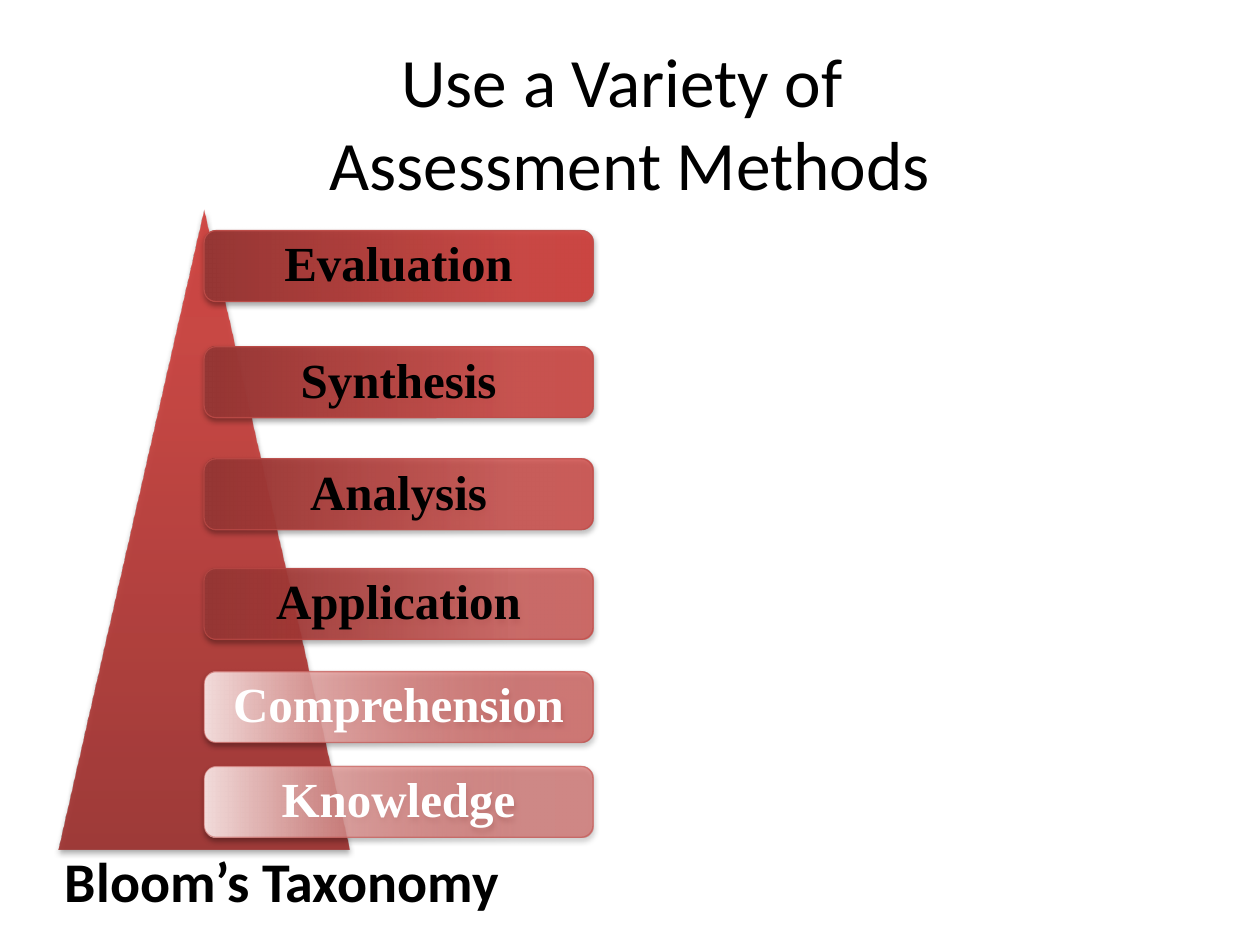
from lxml import etree
from pptx import Presentation
from pptx.dml import color as dml
from pptx.enum import shapes, text
from pptx.oxml import ns
from pptx.util import Cm, Pt

LEVELS = [
    ("Evaluation", 0, "953735", "000000"),
    ("Synthesis", 2.34, "953735", "000000"),
    ("Analysis", 4.6, "953735", "000000"),
    ("Application", 6.81, "953735", "000000"),
    ("Comprehension", 8.89, "F2DCDB", "FFFFFF"),
    ("Knowledge", 10.8, "F2DCDB", "FFFFFF"),
]


def rgb(value):
    """Turn a hex string into a colour."""
    return dml.RGBColor.from_string(value)


def add_tint(parent, value, opacity):
    """Append a partly transparent colour to an XML element."""
    tint = etree.SubElement(parent, ns.qn("a:srgbClr"), val=str(rgb(value)))
    etree.SubElement(tint, ns.qn("a:alpha"), val=str(opacity * 1000))


def shade(shape, start, start_opacity, opacity, angle):
    """Give a shape its red gradient and soft shadow."""
    shape.fill.gradient()
    shape.fill.gradient_angle = angle
    properties = shape._element.spPr
    stops = properties.find(".//" + ns.qn("a:gsLst"))
    for stop in list(stops):
        stops.remove(stop)
    for position, value, alpha in [
        (0, start, start_opacity), (80, "CB3E3A", opacity), (100, "CE3B37", opacity)
    ]:
        add_tint(etree.SubElement(stops, ns.qn("a:gs"), pos=str(position * 1000)), value, alpha)
    shape.shadow.inherit = False
    shadow = etree.SubElement(
        properties.find(ns.qn("a:effectLst")), ns.qn("a:outerShdw"),
        blurRad=str(Pt(3.1)), dist=str(Pt(1.8)), dir="5400000", rotWithShape="0",
    )
    add_tint(shadow, "000000", 35)


def write(frame, words, font_name, size, value, bold=False, align=None):
    """Write one formatted paragraph."""
    frame.word_wrap = True
    frame.text = words
    paragraph = frame.paragraphs[0]
    paragraph.alignment = align
    for run in paragraph.runs:
        run.font.name = font_name
        run.font.size = Pt(size)
        run.font.bold = bold
        run.font.color.rgb = rgb(value)


def add_heading(slide, left, top, width, height):
    """Add the slide heading."""
    frame = slide.shapes.add_textbox(left, top, width, height).text_frame
    frame.vertical_anchor = text.MSO_ANCHOR.MIDDLE
    write(frame, "Use a Variety of \vAssessment Methods", "Calibri", 39.6, "000000",
          align=text.PP_ALIGN.CENTER)


def add_level(slide, left, top, width, height, name, start, ink, opacity):
    """Add one labelled level of the taxonomy."""
    level = slide.shapes.add_shape(
        shapes.MSO_SHAPE.ROUNDED_RECTANGLE, left, top, width, height)
    shade(level, start, 100, opacity, 0)
    level.line.color.rgb = rgb("BF4C48")
    level.line.width = Pt(0.75)
    outline = level._element.spPr.find(ns.qn("a:ln")).find(".//" + ns.qn("a:srgbClr"))
    etree.SubElement(outline, ns.qn("a:alpha"), val=str(opacity * 1000))
    frame = level.text_frame
    frame.margin_left = frame.margin_right = Cm(0.36)
    frame.margin_top = frame.margin_bottom = Cm(0.36)
    frame.vertical_anchor = text.MSO_ANCHOR.MIDDLE
    write(frame, name, "Times New Roman", 28, ink, True, text.PP_ALIGN.CENTER)
    frame.paragraphs[0].line_spacing = 0.9


def add_pyramid(slide, left, top, width, height):
    """Add the triangle with its levels starting at the middle."""
    triangle = slide.shapes.add_shape(
        shapes.MSO_SHAPE.ISOSCELES_TRIANGLE, left, top, width, height)
    shade(triangle, "9C2F2D", 90, 90, 90)
    triangle.line.fill.background()
    for index, (name, offset, start, ink) in enumerate(LEVELS):
        add_level(slide, left + width // 2, top + Cm(0.42 + offset), Cm(7.84), Cm(1.43),
                  name, start, ink, 90 - 8 * index)


def add_caption(slide, left, top, width, height):
    """Add the name of the taxonomy."""
    frame = slide.shapes.add_textbox(left, top, width, height).text_frame
    write(frame, "Bloom’s Taxonomy", "Calibri", 32, "000000", True)


def main():
    """Build and save the slide."""
    deck = Presentation()
    deck.slide_width, deck.slide_height = Cm(25.4), Cm(19.05)
    slide = deck.slides.add_slide(deck.slide_layouts[6])
    add_pyramid(slide, Cm(1.18), Cm(4.23), Cm(5.87), Cm(12.9))
    add_caption(slide, Cm(1.06), Cm(16.94), Cm(9.73), Cm(1.62))
    add_heading(slide, Cm(1.27), Cm(0.85), Cm(22.86), Cm(3.18))
    deck.save("out.pptx")


if __name__ == "__main__":
    main()
